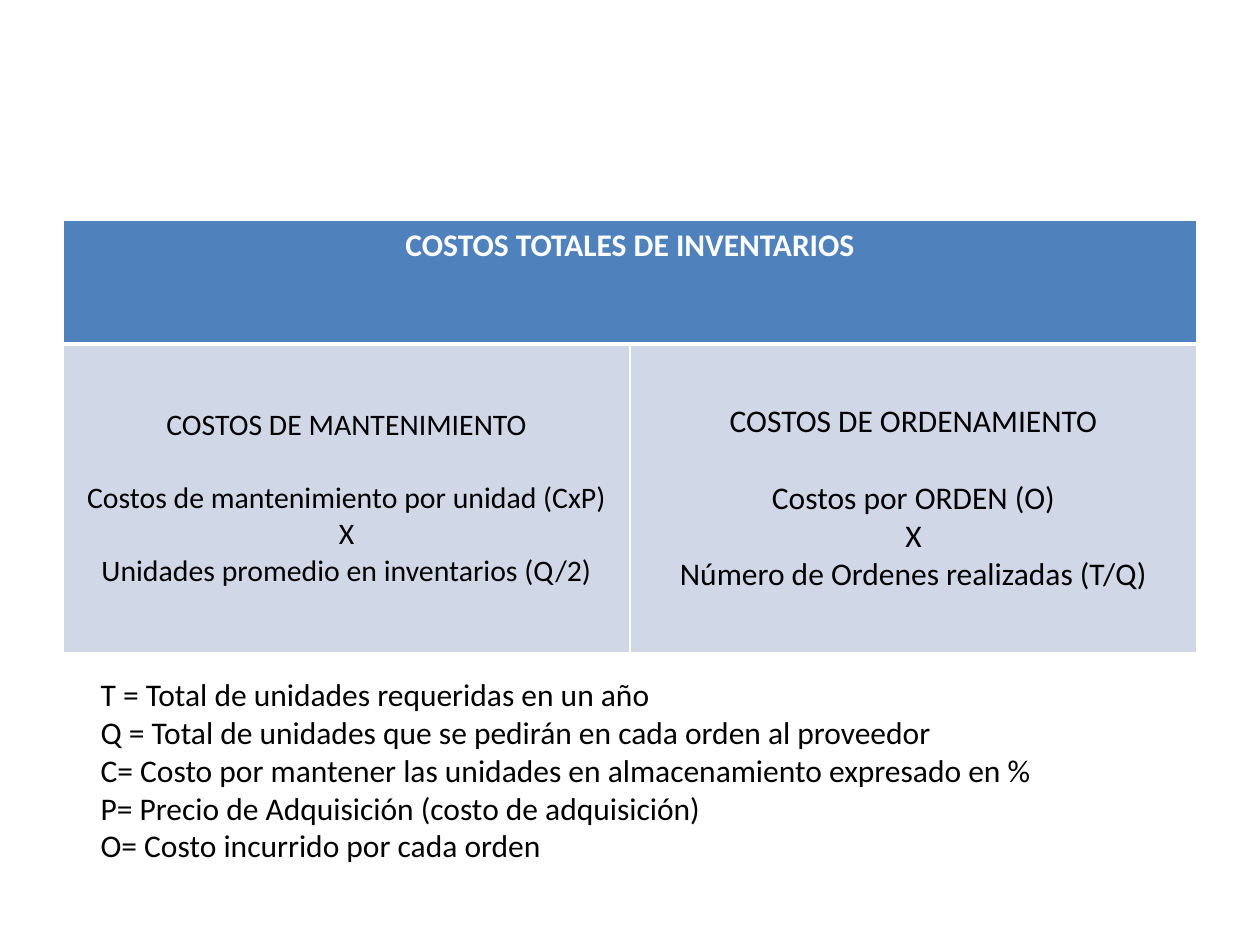
from pptx import Presentation
from pptx.dml.color import RGBColor
from pptx.enum.text import MSO_ANCHOR, PP_ALIGN
from pptx.oxml import parse_xml
from pptx.oxml.ns import nsdecls
from pptx.util import Pt

HEAD = "COSTOS TOTALES DE INVENTARIOS"
COSTS = [
    (17, ["COSTOS DE MANTENIMIENTO",
          "Costos de mantenimiento por unidad (CxP)",
          "X",
          "Unidades promedio en inventarios (Q/2)"]),
    (18, ["COSTOS DE ORDENAMIENTO",
          "Costos por ORDEN (O)",
          "X",
          "Número de Ordenes realizadas (T/Q)"]),
]
TERMS = [
    "T = Total de unidades requeridas en un año",
    "Q = Total de unidades que se pedirán en cada orden al proveedor",
    "C= Costo por mantener las unidades en almacenamiento expresado en %",
    "P= Precio de Adquisición (costo de adquisición)",
    "O= Costo incurrido por cada orden",
]
LEAD = 1.22


def color(code):
    return RGBColor.from_string(code)


def write(frame, lines, size, ink, bold=False, align=PP_ALIGN.LEFT):
    frame.text = "\n".join(lines)
    for para in frame.paragraphs:
        para.alignment = align
        for run in para.runs:
            font = run.font
            font.name = "Calibri"
            font.size = Pt(size)
            font.bold = bold
            font.color.rgb = color(ink)


def paint(cell, fill, top=1, base=1):
    cell.fill.solid()
    cell.fill.fore_color.rgb = color(fill)
    props = cell._tc.get_or_add_tcPr()
    sides = [("L", 1), ("R", 1), ("T", top), ("B", base)]
    for spot, (side, width) in enumerate(sides):
        props.insert(spot, parse_xml(
            f'<a:ln{side} {nsdecls("a")} w="{Pt(width)}"><a:solidFill>'
            f'<a:srgbClr val="FFFFFF"/></a:solidFill></a:ln{side}>'))


def add_costs(slide, left, top, width, height):
    table = slide.shapes.add_table(
        2, 2, Pt(left), Pt(top), Pt(width), Pt(height)).table
    for col in table.columns:
        col.width = Pt(width / 2)
    table.rows[0].height = Pt(70.5)
    table.rows[1].height = Pt(height - 70.5)

    title = table.cell(0, 0)
    title.merge(table.cell(0, 1))
    write(title.text_frame, [HEAD], 18, "FFFFFF", True, PP_ALIGN.CENTER)
    for index, (size, lines) in enumerate(COSTS):
        paint(table.cell(0, index), "4F81BD", base=3)
        cell = table.cell(1, index)
        paint(cell, "D0D8E8", top=3)
        cell.vertical_anchor = MSO_ANCHOR.MIDDLE
        write(cell.text_frame, lines, size, "000000", align=PP_ALIGN.CENTER)
        cell.text_frame.paragraphs[0].space_after = Pt(size * LEAD)


def add_terms(slide, left, top, width, height):
    box = slide.shapes.add_textbox(Pt(left), Pt(top), Pt(width), Pt(height))
    box.text_frame.word_wrap = True
    write(box.text_frame, TERMS, 18, "000000")


def main():
    deck = Presentation()
    deck.slide_width, deck.slide_height = Pt(720), Pt(540)
    slide = deck.slides.add_slide(deck.slide_layouts[6])
    add_costs(slide, 36, 126, 648, 247)
    add_terms(slide, 50.4, 382.3, 630, 116.6)
    deck.save("out.pptx")


if __name__ == "__main__":
    main()
